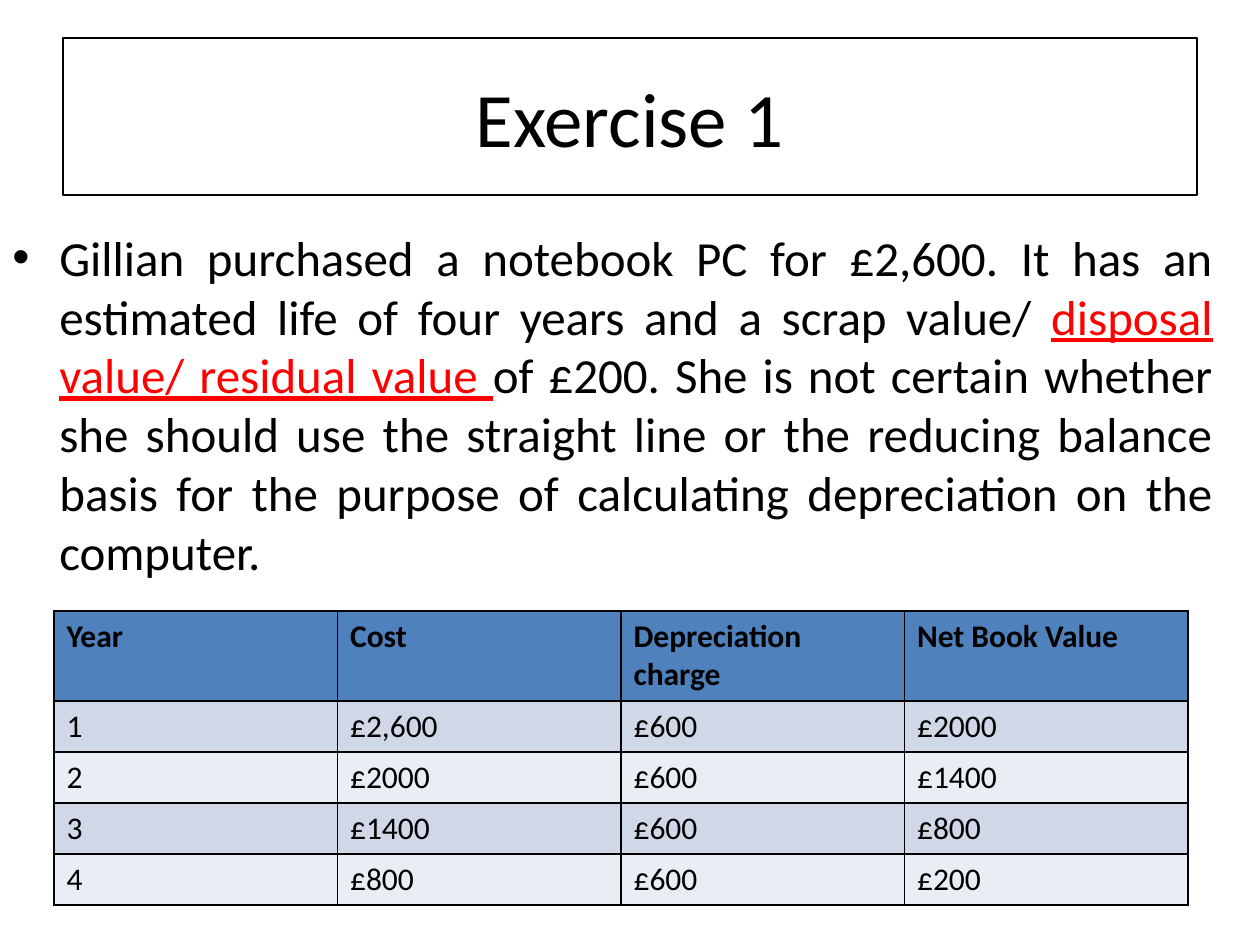
from lxml import etree
from pptx import Presentation
from pptx.dml.color import RGBColor
from pptx.enum.shapes import MSO_SHAPE
from pptx.enum.text import MSO_ANCHOR, PP_ALIGN
from pptx.oxml import parse_xml
from pptx.oxml.ns import nsdecls, qn
from pptx.util import Inches, Pt

RECTANGLE = MSO_SHAPE.RECTANGLE
MIDDLE = MSO_ANCHOR.MIDDLE
CENTER = PP_ALIGN.CENTER
JUSTIFY = PP_ALIGN.JUSTIFY
FONT = "Calibri"
BLACK, WHITE, RED = "000000", "FFFFFF", "FF0000"
HEADER_FILL = "4F81BD"
BAND_FILLS = ["E9EDF4", "D0D8E8"]


def px(length):
    return round(length * Inches(1) / 126)


def color(value):
    return RGBColor.from_string(value)


presentation = Presentation()
presentation.slide_width = px(1260)
presentation.slide_height = px(945)
slide = presentation.slides.add_slide(presentation.slide_layouts[6])

title = slide.shapes.add_shape(RECTANGLE, px(63), px(38), px(1134), px(157))
title.shadow.inherit = False
title.fill.solid()
title.fill.fore_color.rgb = color(WHITE)
title.line.color.rgb = color(BLACK)
title.line.width = Pt(0.75)
title.text_frame.vertical_anchor = MIDDLE
paragraph = title.text_frame.paragraphs[0]
paragraph.text = "Exercise 1"
paragraph.alignment = CENTER
paragraph.font.name = FONT
paragraph.font.size = Pt(44)
paragraph.font.color.rgb = color(BLACK)

body = slide.shapes.add_textbox(0, px(221), px(1225), px(687))
body.text_frame.word_wrap = True
paragraph = body.text_frame.paragraphs[0]
paragraph.alignment = JUSTIFY
paragraph.space_before = Pt(5.6)
paragraph.font.name = FONT
paragraph.font.size = Pt(28)
properties = paragraph._p.get_or_add_pPr()
properties.set("marL", str(px(47)))
properties.set("indent", str(-px(47)))
bullet_font = parse_xml(f'<a:buFont {nsdecls("a")} typeface="Arial"/>')
bullet = parse_xml(f'<a:buChar {nsdecls("a")} char="•"/>')
properties.find(qn("a:spcBef")).addnext(bullet_font)
bullet_font.addnext(bullet)

exercise_runs = [
    ("Gillian purchased a notebook PC for £2,600. It has an estimated life "
     "of four years and a scrap value/ ", BLACK, False),
    ("disposal value/ residual value ", RED, True),
    ("of £200. She is not certain whether she should use the straight line "
     "or the reducing balance basis for the purpose of calculating "
     "depreciation on the computer. ", BLACK, False),
]
for text, text_color, underlined in exercise_runs:
    run = paragraph.add_run()
    run.text = text
    run.font.color.rgb = color(text_color)
    run.font.underline = underlined

depreciation_rows = [
    ["Year", "Cost", "Depreciation charge", "Net Book Value"],
    ["1", "£2,600", "£600", "£2000"],
    ["2", "£2000", "£600", "£1400"],
    ["3", "£1400", "£600", "£800"],
    ["4", "£800", "£600", "£200"],
]
table = slide.shapes.add_table(5, 4, px(54), px(611), px(1134), px(294)).table
for column in table.columns:
    column.width = px(1134 / 4)
for row_index, values in enumerate(depreciation_rows):
    is_header = row_index == 0
    table.rows[row_index].height = px(90 if is_header else 51)
    for column_index, value in enumerate(values):
        cell = table.cell(row_index, column_index)
        cell_properties = cell._tc.get_or_add_tcPr()
        for side in ("lnL", "lnR", "lnT", "lnB"):
            border = etree.SubElement(cell_properties, qn(f"a:{side}"), w=str(Pt(1)))
            border_fill = etree.SubElement(border, qn("a:solidFill"))
            etree.SubElement(border_fill, qn("a:srgbClr"), val=BLACK)
        cell.fill.solid()
        cell.fill.fore_color.rgb = color(HEADER_FILL if is_header else BAND_FILLS[row_index % 2])
        paragraph = cell.text_frame.paragraphs[0]
        paragraph.text = value
        paragraph.font.name = FONT
        paragraph.font.size = Pt(18)
        paragraph.font.bold = is_header
        paragraph.font.color.rgb = color(BLACK)

presentation.save("out.pptx")
